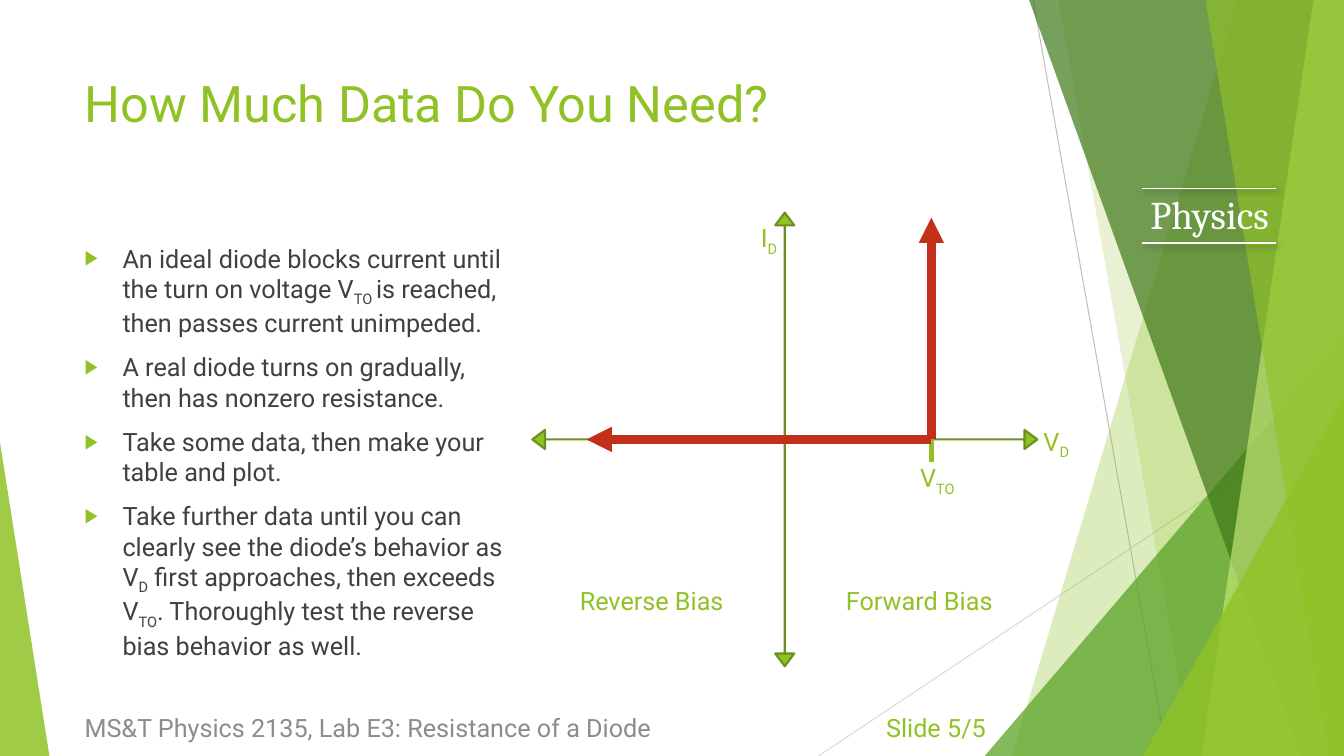
"""Build a slide on how much diode data to take."""
from lxml.etree import SubElement
from pptx import Presentation
from pptx.dml.color import RGBColor
from pptx.enum.shapes import MSO_CONNECTOR, MSO_SHAPE
from pptx.enum.text import MSO_ANCHOR, MSO_AUTO_SIZE, PP_ALIGN
from pptx.oxml.ns import qn
from pptx.util import Pt

WIDE, HIGH = 960, 540
LIME, DARK, RED, WHITE = "90C226", "404040", "C42F1A", "FFFFFF"
TITLE = "How Much Data Do You Need?"
POINTS = [
    "An ideal diode blocks current until the turn on voltage V_TO _is reached, "
    "then passes current unimpeded.",
    "A real diode turns on gradually, then has nonzero resistance.",
    "Take some data, then make your table and plot.",
    "Take further data until you can clearly see the diode’s behavior as V_D_ first "
    "approaches, then exceeds V_TO_. Thoroughly test the reverse bias behavior as well.",
]
LABELS = [
    ("V_TO_", 622.1, 326.9, 95),
    ("V_D_", 707, 301, 95),
    ("I_D_", 501.8, 155.5, 95),
    ("Forward Bias", 594, 414.7, 125.3),
    ("Reverse Bias", 406.1, 414.7, 118.8),
]
RAYS = [(738, 0, 833.8, HIGH, "BFBFBF"), (WIDE, 290.2, 584.6, HIGH, "D9D9D9")]
BANDS = [
    ("band", (884.2, 722.9), LIME, 30),
    ("band", (756, 851.8), LIME, 20),
    ("wedge", (703.4, 239.8, 256.6, 1), "54A021", 72),
    ("band", (735.1, 929.5), "3F7819", 70),
    ("band", (938.2, 858.2), "C0E474", 70),
    ("band", (861.1, 949), LIME, 65),
    ("wedge", (816.5, 283, 143.5, 1), LIME, 80),
    ("wedge", (0, 316.1, 35.3, 0), LIME, 85),
]
KNEE, AXIS = 665.3, 313.9
CURVE = [
    (KNEE, AXIS, KNEE, 155.5, RED, 6, True),
    (KNEE, AXIS, KNEE, 329.8, LIME, 3, False),
    (KNEE, AXIS, 419, AXIS, RED, 6, True),
]


def color(code):
    return RGBColor.from_string(code)


def node(base, tag, **attrs):
    return SubElement(base, qn(tag), {key: str(val) for key, val in attrs.items()})


def shade(props):
    glow = node(node(props, "a:effectLst"), "a:outerShdw", blurRad=Pt(4),
                dist=Pt(3), dir=45 * 60000, algn="tl", rotWithShape=0)
    node(node(glow, "a:srgbClr", val="000000"), "a:alpha", val=40000)


def place(shape, left, top, width, height):
    shape.left, shape.top, shape.width, shape.height = map(Pt, (left, top, width, height))


def paint(shape, code, alpha=100):
    shape.shadow.inherit = False
    shape.fill.solid()
    shape.fill.fore_color.rgb = color(code)
    shape.line.fill.background()
    if alpha < 100:
        tint = shape.fill._xPr.find(qn("a:solidFill")).find(qn("a:srgbClr"))
        node(tint, "a:alpha", val=alpha * 1000)


def write(shape, *lines, size=18, font="Roboto", ink=LIME, align=PP_ALIGN.LEFT,
          anchor=MSO_ANCHOR.TOP, bullet=False, shadow=False):
    frame = shape.text_frame
    frame.word_wrap = True
    frame.auto_size = MSO_AUTO_SIZE.NONE
    frame.vertical_anchor = anchor
    for row, line in enumerate(lines):
        para = frame.add_paragraph() if row else frame.paragraphs[0]
        para.alignment = align
        para.space_before = Pt(10 if row else 0)
        if bullet:
            props = para._p.get_or_add_pPr()
            props.set("marL", str(Pt(27)))
            props.set("indent", str(Pt(-27)))
            node(node(props, "a:buClr"), "a:srgbClr", val=LIME)
            node(props, "a:buSzPct", val=80000)
            node(props, "a:buChar", char="▶")
        for part, text in enumerate(line.split("_")):
            if not text:
                continue
            run = para.add_run()
            run.text = text
            run.font.size = Pt(size)
            run.font.color.rgb = color(ink)
            if shadow:
                shade(run._r.get_or_add_rPr())
            run.font.name = font
            if part % 2:
                run._r.get_or_add_rPr().set("baseline", "-25000")


def label(shapes, text, left, top, width, height=28.8, **style):
    box = shapes.add_textbox(Pt(left), Pt(top), Pt(width), Pt(height))
    write(box, text, **style)


def stroke(shapes, x1, y1, x2, y2, code, width, arrow=False, shadow=False):
    line = shapes.add_connector(MSO_CONNECTOR.STRAIGHT, *map(Pt, (x1, y1, x2, y2)))
    line.line.color.rgb = color(code)
    line.line.width = Pt(width)
    if arrow:
        node(line.line._get_or_add_ln(), "a:tailEnd", type="triangle")
    props = line._element.spPr
    if shadow:
        shade(props)
    else:
        node(props, "a:effectLst")


def facet(shapes, kind, form, code, alpha):
    if kind == "band":
        head, foot = form
        path = shapes.build_freeform(Pt(head), 0)
        path.add_line_segments([(Pt(WIDE), 0), (Pt(WIDE), Pt(HIGH)), (Pt(foot), Pt(HIGH))])
        shape = path.convert_to_shape()
    else:
        left, top, width, tip = form
        shape = shapes.add_shape(MSO_SHAPE.ISOSCELES_TRIANGLE,
                                 *map(Pt, (left, top, width, HIGH - top)))
        shape.adjustments[0] = tip
    paint(shape, code, alpha)


def main():
    deck = Presentation()
    deck.slide_width, deck.slide_height = Pt(WIDE), Pt(HIGH)
    slide = deck.slides.add_slide(deck.slide_layouts[1])
    shapes = slide.shapes
    title, body = shapes.title, slide.placeholders[1]

    for ray in RAYS:
        stroke(shapes, *ray, 0.75)
    for band in BANDS:
        facet(shapes, *band)
    label(shapes, "Physics", 759.6, 132.5, 208.8, 41, size=28, font="Cambria",
          ink=WHITE, align=PP_ALIGN.CENTER, shadow=True)
    for level in (173.5, 134.6):
        stroke(shapes, 815.8, level, 911.5, level, WHITE, 1, shadow=True)

    for holder in (title, body):
        shapes._spTree.append(holder._element)
    place(title, 53.3, 48.2, 676.8, 103.7)
    write(title, TITLE, size=36)
    place(body, 53.3, 169.9, 324, 305.3)
    write(body, *POINTS, ink=DARK, bullet=True)
    label(shapes, "MS&T Physics 2135, Lab E3: Resistance of a Diode", 53.3, 505.4, 496.1,
          ink="8C8C8C", anchor=MSO_ANCHOR.MIDDLE)
    label(shapes, "Slide 5/5", 573.8, 505.4, 137.5, align=PP_ALIGN.RIGHT,
          anchor=MSO_ANCHOR.MIDDLE)

    axes = shapes.add_shape(MSO_SHAPE.QUAD_ARROW, *map(Pt, (380.2, 151.9, 360.7, 324)))
    for spot, value in enumerate((0, 0.021, 0.028)):
        axes.adjustments[spot] = value
    paint(axes, LIME)
    axes.line.color.rgb = color("6B901C")
    axes.line.width = Pt(1.5)
    for piece in CURVE:
        stroke(shapes, *piece)
    for item in LABELS:
        label(shapes, *item, align=PP_ALIGN.CENTER)
    deck.save("out.pptx")


if __name__ == "__main__":
    main()
